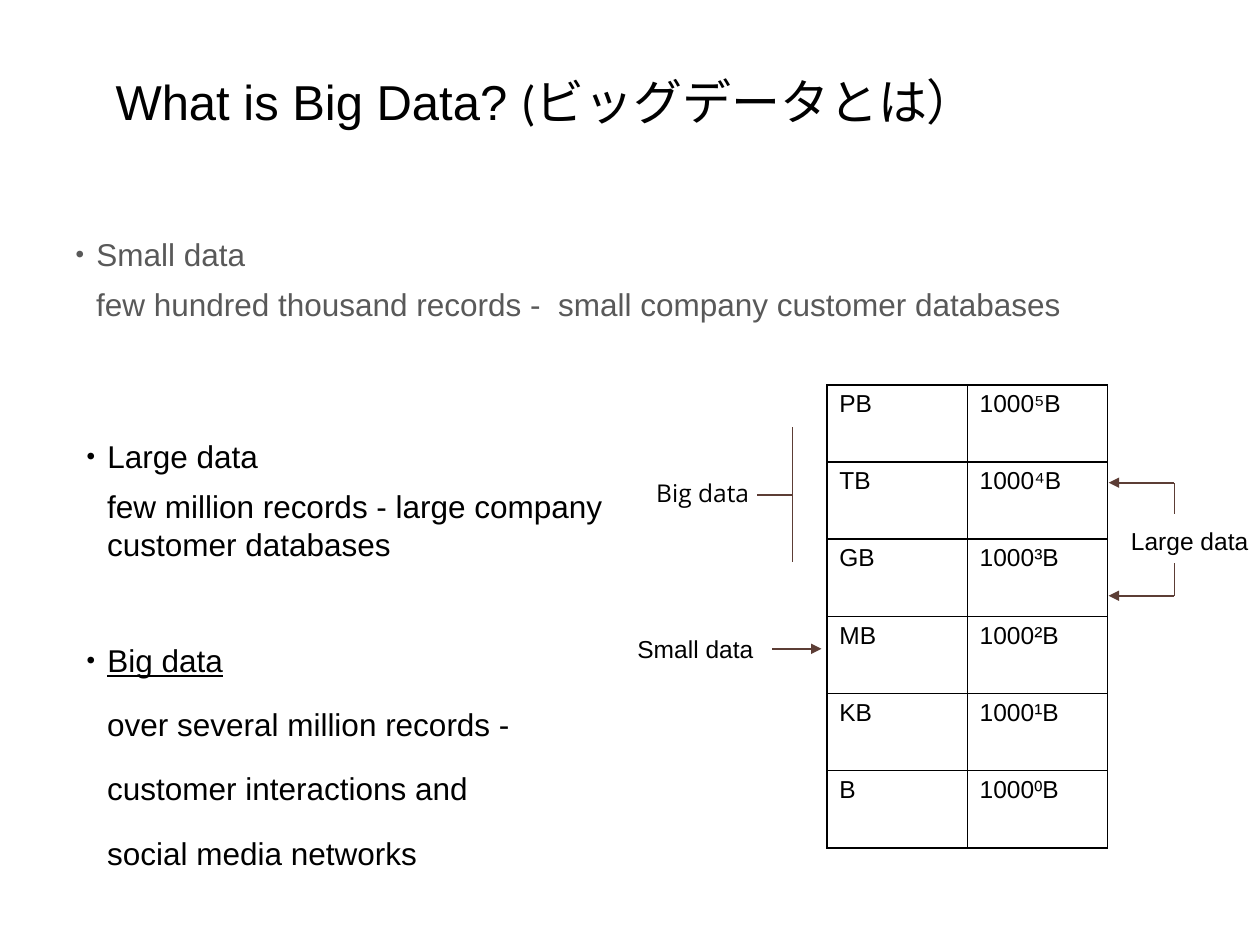
from lxml import etree
from pptx import Presentation
from pptx.dml.color import RGBColor
from pptx.enum.shapes import MSO_CONNECTOR
from pptx.enum.text import MSO_ANCHOR, MSO_AUTO_SIZE, PP_ALIGN
from pptx.oxml.ns import qn
from pptx.util import Cm, Pt

LEFT, RIGHT = PP_ALIGN.LEFT, PP_ALIGN.RIGHT
TOP = MSO_ANCHOR.TOP
NO_AUTOFIT = MSO_AUTO_SIZE.NONE
STRAIGHT = MSO_CONNECTOR.STRAIGHT
color = RGBColor.from_string
BLACK, GREY, BROWN = "000000", "595959", "5C3D35"


def set_frame(frame, left, top, right, bottom, wrap=True):
    frame.margin_left, frame.margin_top = Cm(left), Cm(top)
    frame.margin_right, frame.margin_bottom = Cm(right), Cm(bottom)
    frame.word_wrap = wrap
    frame.auto_size = NO_AUTOFIT
    frame.vertical_anchor = TOP


def add_line(x1, y1, x2, y2, arrow=False):
    line = slide.shapes.add_connector(STRAIGHT, Cm(x1), Cm(y1), Cm(x2), Cm(y2))
    line.line.color.rgb = color(BROWN)
    line.line.width = Pt(1.25 if arrow else 0.75)
    if arrow:
        etree.SubElement(line.line._ln, qn("a:tailEnd"), type="triangle")
    etree.SubElement(line._element.spPr, qn("a:effectLst"))


prs = Presentation()
prs.slide_width, prs.slide_height = Cm(25.4), Cm(19.05)
slide = prs.slides.add_slide(prs.slide_layouts[5])

# Title
title = slide.shapes.title
title.left, title.top, title.width, title.height = Cm(2.3), Cm(1.42), Cm(22.56), Cm(1.24)
set_frame(title.text_frame, 0.03, 0.03, 0, 0)
heading = title.text_frame.paragraphs[0]
heading.alignment = LEFT
heading.font.size = Pt(28)
heading.font.color.rgb = color(BLACK)
for words, font in [("What is Big Data? ", "Arial"), ("(ビッグデータとは）", "Calibri")]:
    run = heading.add_run()
    run.text = words
    run.font.name = font

# Definitions: place, top and right inset, term, underline, meaning, line spacing, space before, colour
definitions = [
    ((1.28, 4.45, 22.86, 3.15), 0.28, 0, "Small data", False,
     "few hundred thousand records -  small company customer databases", 1.33, 0, GREY),
    ((1.5, 8.51, 11.23, 2.87), 0.3, 0, "Large data", False,
     "few million records - large company customer databases", 1, 7.2, BLACK),
    ((1.5, 11.68, 14.63, 5.41), 1.24, 5.08, "Big data", True,
     "over several million records - customer interactions and social media networks",
     1.7, 0, BLACK),
]
for place, inset_top, inset_right, term, underline, meaning, spacing, before, ink in definitions:
    box = slide.shapes.add_textbox(*map(Cm, place))
    set_frame(box.text_frame, 0.03, inset_top, inset_right, 0)
    term_line = box.text_frame.paragraphs[0]
    for words, font in [("・", "Noto Sans CJK JP"), (term, "Arial")]:
        run = term_line.add_run()
        run.text = words
        run.font.name = font
    run.font.underline = underline
    meaning_line = box.text_frame.add_paragraph()
    meaning_line.text = meaning
    meaning_line.font.name = "Arial"
    meaning_line.line_spacing = spacing
    meaning_line.space_before = Pt(before)
    meaning_line._p.get_or_add_pPr().set("marL", str(Cm(0.63)))
    for paragraph in (term_line, meaning_line):
        paragraph.font.size = Pt(18)
        paragraph.font.color.rgb = color(ink)

# Table of units
units = list(zip(["PB", "TB", "GB", "MB", "KB", "B"], "⁵⁴³²¹⁰"))
table_frame = slide.shapes.add_table(len(units), 2, Cm(16.67), Cm(7.76), Cm(5.66), Cm(9.33))
table = table_frame.table
table.first_row = table.horz_banding = False
for column in table.columns:
    column.width = Cm(2.83)
for row, (unit, power) in zip(table.rows, units):
    row.height = Cm(9.33 / len(units))
    for cell, words in zip(row.cells, [unit, f"1000{power}B"]):
        cell.text = words
        cell.margin_left, cell.margin_top = Cm(0.25), Cm(0.11)
        cell.margin_right = cell.margin_bottom = 0
        font = cell.text_frame.paragraphs[0].font
        font.name, font.size = "Arial", Pt(14)
        font.color.rgb = color(BLACK)
        properties = cell._tc.get_or_add_tcPr()
        for side in ("lnL", "lnR", "lnT", "lnB"):
            border = etree.SubElement(properties, qn(f"a:{side}"), w=str(Pt(1)))
            border_fill = etree.SubElement(border, qn("a:solidFill"))
            etree.SubElement(border_fill, qn("a:srgbClr"), val=BLACK)
        cell.fill.background()

# Labels beside the table
labels = [
    ("Big data", 12.98, 9.39, 2.74, 1.12, 0.25, "Open Sans", LEFT),
    ("Small data", 12.26, 12.54, 3.18, 1.12, 0.25, "Arial", RIGHT),
    ("Large data", 22.77, 10.57, 2.44, 0.64, 0.03, "Arial", LEFT),
]
for words, left, top, width, height, inset, font, alignment in labels:
    label = slide.shapes.add_textbox(Cm(left), Cm(top), Cm(width), Cm(height))
    set_frame(label.text_frame, inset, inset, inset, inset, wrap=False)
    paragraph = label.text_frame.paragraphs[0]
    paragraph.text = words
    paragraph.alignment = alignment
    paragraph.font.name, paragraph.font.size = font, Pt(14)
    paragraph.font.color.rgb = color(BLACK)

# Big data bracket: a spine and a stem towards the label
outline = slide.shapes.build_freeform(Cm(15.98), Cm(8.61))
outline.add_line_segments([(Cm(15.98), Cm(11.33))], close=False)
outline.move_to(Cm(15.27), Cm(9.98))
outline.add_line_segments([(Cm(15.98), Cm(9.98))], close=False)
bracket = outline.convert_to_shape()
bracket.shadow.inherit = False
bracket.fill.background()
bracket.line.color.rgb = color(BROWN)
bracket.line.width = Pt(0.75)

# Small data arrow
add_line(15.57, 13.08, 16.56, 13.08, arrow=True)

# Large data arrows, above and below the label
for label_end, arrow_y in [(10.36, 9.73), (11.35, 12.01)]:
    add_line(23.67, label_end, 23.67, arrow_y)
    add_line(23.67, arrow_y, 22.35, arrow_y, arrow=True)

prs.save("out.pptx")
